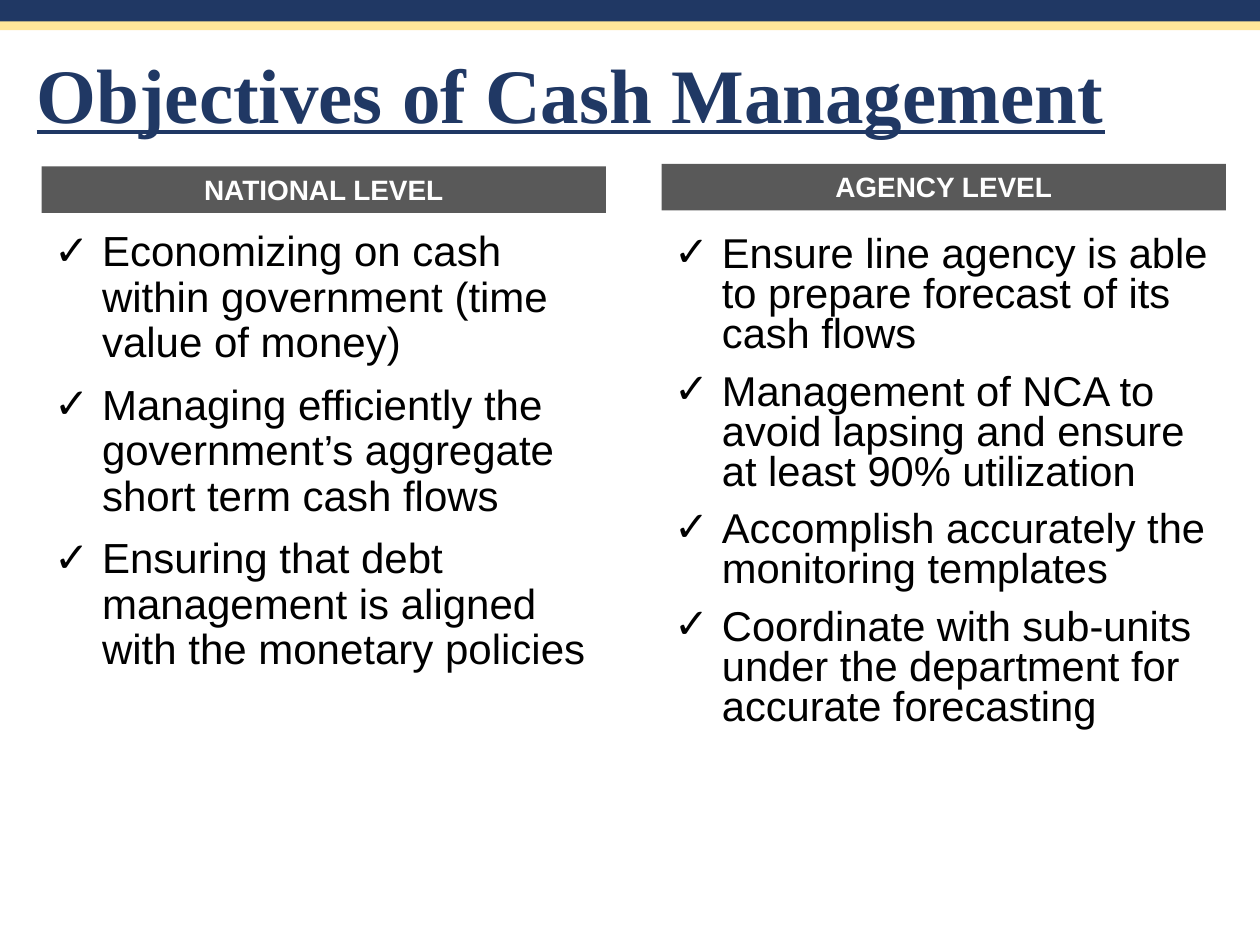
from dataclasses import dataclass

from lxml import etree
from pptx import Presentation, util as u
from pptx.dml.color import RGBColor
from pptx.enum import shapes, text
from pptx.oxml.ns import qn


@dataclass(frozen=True)
class Theme:
    navy: str = "203864"
    cream: str = "FFE699"
    gray: str = "595959"
    white: str = "FFFFFF"
    black: str = "000000"
    serif: str = "Times New Roman"
    sans: str = "Arial"
    title_size: float = 44
    heading_size: float = 16


THEME = Theme()
COLUMN_LEFTS = (0.33, 5.25)
COLUMN_WIDTH = 4.48
HEADING_HEIGHT = 0.37
LIST_HEIGHT = 4.76
BULLET_INDENT = 0.38

NATIONAL = (
    "Economizing on cash within government (time value of money)",
    "Managing efficiently the government’s aggregate short term cash flows",
    "Ensuring that debt management is aligned with the monetary policies",
)
AGENCY = (
    "Ensure line agency is able to prepare forecast of its cash flows",
    "Management of NCA to avoid lapsing and ensure at least 90% utilization",
    "Accomplish accurately the monitoring templates",
    "Coordinate with sub-units under the department for accurate forecasting",
)


def apply(target, values):
    for key, value in values.items():
        setattr(target, key, value)


def place(part, left, top, width, height):
    box = dict(left=left, top=top, width=width, height=height)
    apply(part, {side: u.Inches(length) for side, length in box.items()})


def write(paragraph, words, color, paragraph_format, font_format):
    run = paragraph.add_run()
    run.text = words
    apply(paragraph, paragraph_format)
    apply(run.font, font_format)
    run.font.color.rgb = RGBColor.from_string(color)


def add_bar(slide, box, color):
    bar = slide.shapes.add_shape(shapes.MSO_SHAPE.RECTANGLE, *map(u.Inches, box))
    bar.shadow.inherit = False
    bar.fill.solid()
    bar.fill.fore_color.rgb = RGBColor.from_string(color)
    bar.line.fill.background()
    return bar


def fill_title(title, words):
    place(title, 0.19, 0.06, 9.99, 1.45)
    apply(title.text_frame, dict(
        auto_size=text.MSO_AUTO_SIZE.NONE,
        vertical_anchor=text.MSO_ANCHOR.MIDDLE, word_wrap=True))
    write(title.text_frame.paragraphs[0], words, THEME.navy,
          dict(alignment=text.PP_ALIGN.LEFT, line_spacing=0.9),
          dict(name=THEME.serif, size=u.Pt(THEME.title_size),
               bold=True, underline=True))


def add_heading(slide, left, top, words):
    heading = add_bar(slide, (left, top, COLUMN_WIDTH, HEADING_HEIGHT), THEME.gray)
    apply(heading.text_frame, dict(
        word_wrap=True, vertical_anchor=text.MSO_ANCHOR.TOP,
        auto_size=text.MSO_AUTO_SIZE.SHAPE_TO_FIT_TEXT))
    write(heading.text_frame.paragraphs[0], words, THEME.white,
          dict(alignment=text.PP_ALIGN.CENTER),
          dict(name=THEME.sans, size=u.Pt(THEME.heading_size), bold=True))


def add_check(paragraph):
    properties = paragraph._p.get_or_add_pPr()
    indent = u.Inches(BULLET_INDENT)
    properties.set("marL", str(indent))
    properties.set("indent", str(-indent))
    etree.SubElement(properties, qn("a:buFont"), typeface=THEME.sans)
    etree.SubElement(properties, qn("a:buChar"), char="✓")


def fill_list(body, left, top, items, size, spacing):
    place(body, left, top, COLUMN_WIDTH, LIST_HEIGHT)
    frame = body.text_frame
    apply(frame, dict(auto_size=text.MSO_AUTO_SIZE.NONE, word_wrap=True))
    for number, item in enumerate(items):
        paragraph = frame.add_paragraph() if number else frame.paragraphs[0]
        write(paragraph, item, THEME.black,
              dict(line_spacing=spacing, space_before=u.Pt(10)),
              dict(name=THEME.sans, size=u.Pt(size)))
        add_check(paragraph)


def main():
    deck = Presentation()
    apply(deck, dict(slide_width=u.Inches(10), slide_height=u.Inches(7.5)))
    slide = deck.slides.add_slide(deck.slide_layouts.get_by_name("Two Content"))
    title, national, agency = slide.placeholders

    # Bands along the top edge
    add_bar(slide, (-0.02, -0.03, 10.02, 0.23), THEME.navy)
    add_bar(slide, (-0.02, 0.17, 10.02, 0.07), THEME.cream)

    fill_title(title, "Objectives of Cash Management")

    # One column per level of government
    national_left, agency_left = COLUMN_LEFTS
    fill_list(national, national_left, 1.78, NATIONAL, 24, 0.9)
    fill_list(agency, agency_left, 1.83, AGENCY, 23.8, 0.8)
    add_heading(slide, national_left, 1.32, "NATIONAL LEVEL")
    add_heading(slide, agency_left, 1.3, "AGENCY LEVEL")

    deck.save("out.pptx")


if __name__ == "__main__":
    main()
